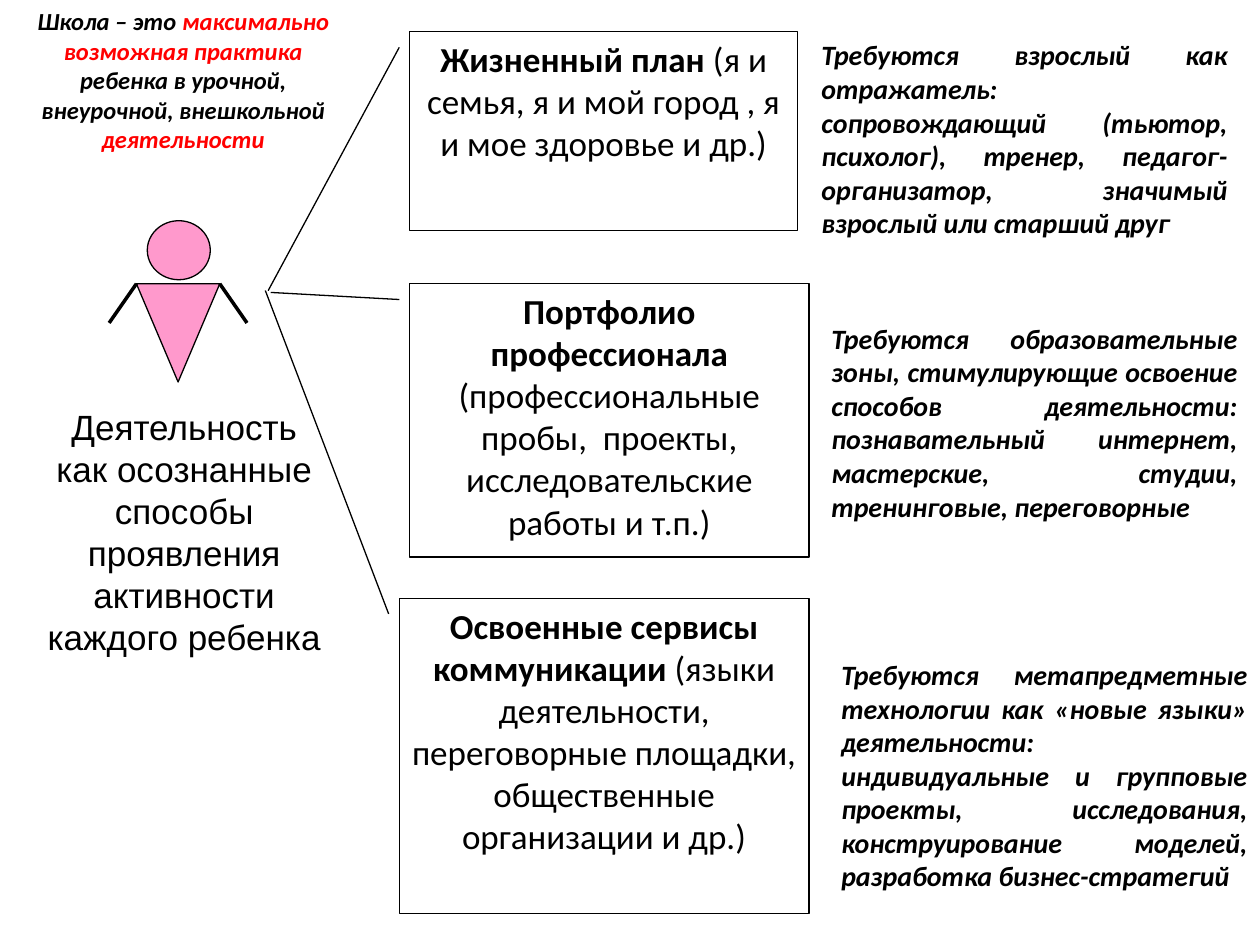
import pptx
import pptx.dml.color
import pptx.enum.shapes
import pptx.enum.text
import pptx.oxml
import pptx.oxml.ns
import pptx.util

Cm = pptx.util.Cm
Pt = pptx.util.Pt
Align = pptx.enum.text.PP_ALIGN
Preset = pptx.enum.shapes.MSO_SHAPE

BLACK = pptx.dml.color.RGBColor(0x00, 0x00, 0x00)
RED = pptx.dml.color.RGBColor(0xFF, 0x00, 0x00)
PINK = pptx.dml.color.RGBColor(0xFF, 0x99, 0xCC)

MOTTO = [
    ("Школа – это ", BLACK),
    ("максимально возможная практика ", RED),
    ("ребенка в урочной, внеурочной, внешкольной ", BLACK),
    ("деятельности", RED),
]
ACTIVITY = "Деятельность как осознанные способы проявления активности каждого ребенка"
RESULTS = [
    ("Жизненный план ",
     "(я и семья, я и мой город , я и мое здоровье и др.)",
     (8.26, 0.64, 7.82, 4.01), (0.079, -0.027, 1.302, -0.365)),
    ("Портфолио профессионала ",
     "(профессиональные пробы,  проекты, исследовательские работы и т.п.)",
     (8.26, 5.72, 8.05, 5.51), (0.058, -0.026, 0.032, -0.348)),
    ("Освоенные сервисы коммуникации ",
     "(языки деятельности, переговорные площадки, общественные организации и др.)",
     (8.05, 12.06, 8.26, 6.35), (0.05, -0.026, -0.977, -0.327)),
]
REQUIREMENTS = [
    ("Требуются взрослый как отражатель: сопровождающий (тьютор, психолог), "
     "тренер, педагог-организатор, значимый взрослый или старший друг",
     (16.31, 0.64, 8.69, 4.37)),
    ("Требуются образовательные зоны, стимулирующие освоение способов деятельности: "
     "познавательный интернет, мастерские, студии, тренинговые, переговорные",
     (16.51, 6.35, 8.69, 5.05)),
    ("Требуются метапредметные технологии как «новые языки» деятельности: "
     "индивидуальные и групповые проекты, исследования, конструирование моделей, "
     "разработка бизнес-стратегий",
     (16.71, 13.13, 8.69, 5.05)),
]


def place(box):
    """Convert a left, top, width, height tuple to lengths."""
    return [Cm(value) for value in box]


def write(frame, pieces, size, align, font="Calibri", italic=False):
    """Write one paragraph of (text, colour, bold) pieces from the top of a frame."""
    frame.word_wrap = True
    frame.vertical_anchor = pptx.enum.text.MSO_ANCHOR.TOP
    paragraph = frame.paragraphs[0]
    paragraph.alignment = align
    for text, colour, bold in pieces:
        run = paragraph.add_run()
        run.text = text
        run.font.name = font
        run.font.size = Pt(size)
        run.font.bold = bold
        run.font.italic = italic
        run.font.color.rgb = colour


def add_outlined(slide, preset, box, fill=None):
    """Add a thinly outlined preset shape, filled only when a colour is given."""
    outlined = slide.shapes.add_shape(preset, *place(box))
    outlined.shadow.inherit = False
    outlined.line.color.rgb = BLACK
    outlined.line.width = Pt(0.75)
    if fill is None:
        outlined.fill.background()
    else:
        outlined.fill.solid()
        outlined.fill.fore_color.rgb = fill
    return outlined


def add_result(slide, heading, details, box, pointer):
    """Add a callout whose pointer leads back to the child."""
    callout = add_outlined(slide, Preset.LINE_CALLOUT_1, box)
    for index, value in enumerate(pointer):
        callout.adjustments[index] = value
    write(callout.text_frame, [(heading, BLACK, True), (details, BLACK, False)],
          20, Align.CENTER)


def add_arm(slide, shoulder, hand):
    """Draw one arm of the child from shoulder to hand."""
    arm = slide.shapes.add_connector(
        pptx.enum.shapes.MSO_CONNECTOR.STRAIGHT, *place(shoulder + hand))
    arm.line.color.rgb = BLACK
    arm.line.width = Pt(2)
    properties = arm._element.spPr
    properties.append(properties.makeelement(pptx.oxml.ns.qn("a:effectLst"), {}))


def add_child(slide):
    """Draw the child from a head, a body and two arms."""
    add_outlined(slide, Preset.OVAL, (2.97, 4.45, 1.27, 1.19), PINK)
    left, top, width = 2.75, 5.72, 1.68
    body = add_outlined(slide, Preset.ISOSCELES_TRIANGLE, (left, top, width, 1.98), PINK)
    body.rotation = 180
    reach, drop = 0.55, 0.79
    add_arm(slide, (left, top), (left - reach, top + drop))
    add_arm(slide, (left + width, top), (left + width + reach, top + drop))


def add_note(slide, text, box, size, align, font="Calibri", emphasis=False):
    """Add a text box that is bold italic when emphasised."""
    note = slide.shapes.add_textbox(*place(box))
    write(note.text_frame, [(text, BLACK, emphasis)], size, align, font, emphasis)
    note.text_frame.auto_size = pptx.enum.text.MSO_AUTO_SIZE.SHAPE_TO_FIT_TEXT


def set_motto(slide):
    """Put the motto into the title placeholder."""
    motto = slide.shapes.title
    motto.left, motto.top, motto.width, motto.height = place((0.2, 0, 6.99, 3.25))
    write(motto.text_frame, [(text, colour, True) for text, colour in MOTTO],
          14, Align.CENTER, italic=True)
    motto.text_frame.auto_size = pptx.enum.text.MSO_AUTO_SIZE.SHAPE_TO_FIT_TEXT


def main():
    """Build the slide and save it."""
    deck = pptx.Presentation()
    deck.slide_width, deck.slide_height = Cm(25.4), Cm(19.05)
    slide = deck.slides.add_slide(deck.slide_layouts.get_by_name("Title Only"))
    set_motto(slide)
    for result in RESULTS:
        add_result(slide, *result)
    add_child(slide)
    add_note(slide, ACTIVITY, (0.64, 8.05, 6.15, 5.33), 20, Align.CENTER, "Arial")
    for text, box in REQUIREMENTS:
        add_note(slide, text, box, 16, Align.JUSTIFY, emphasis=True)
    deck.save("out.pptx")


if __name__ == "__main__":
    main()
